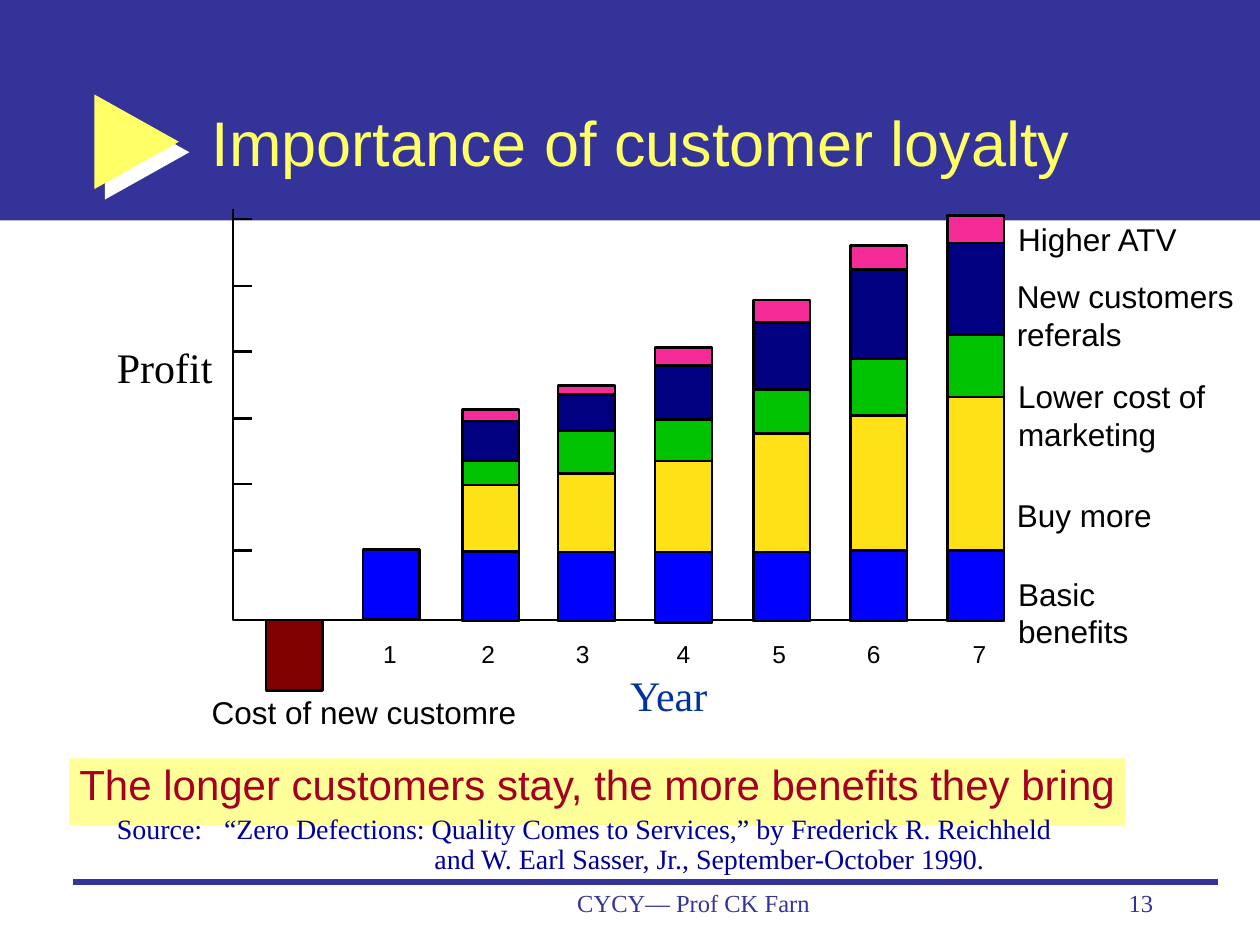
"""Build the customer loyalty slide with its stacked profit columns."""
from typing import NamedTuple

from lxml import etree
from pptx import Presentation
from pptx.dml.color import RGBColor
from pptx.enum.shapes import MSO_CONNECTOR, MSO_SHAPE
from pptx.enum.text import MSO_ANCHOR, PP_ALIGN
from pptx.oxml.ns import qn
from pptx.util import Emu, Pt

PX = 9144
RECTANGLE, ARROW = MSO_SHAPE.RECTANGLE, MSO_SHAPE.RIGHT_ARROW
STRAIGHT = MSO_CONNECTOR.STRAIGHT
LEFT, CENTER, RIGHT = PP_ALIGN.LEFT, PP_ALIGN.CENTER, PP_ALIGN.RIGHT
TOP, MIDDLE = MSO_ANCHOR.TOP, MSO_ANCHOR.MIDDLE
SANS, SERIF = "Arial", "Times New Roman"
BLACK, INDIGO, LEMON = "000000", "333399", "FFFF66"
BENEFIT_COLORS = ("0000FF", "FFE118", "00C200", "000080", "F52B97")
COLUMN_WIDTH, AXIS_LEFT, AXIS_Y, OUTLINE = 45, 185, 492, 1.48
TICK_TOP, TICK_BOTTOM, TICK_COUNT = 174, 437, 6


class Box(NamedTuple):
    """Left, top, width and height in px."""
    left: int
    top: int
    width: int
    height: int


class YearColumn(NamedTuple):
    """A year's column: its place and the top of each benefit, from the base up."""
    year: str
    year_left: int
    left: int
    base: int
    tops: tuple[int, ...]


class Label(NamedTuple):
    """A plain chart label."""
    text: str
    box: Box


YEARS = (
    YearColumn("1", 304, 288, 492, (436,)),
    YearColumn("2", 382, 367, 493, (438, 385, 366, 334, 325)),
    YearColumn("3", 457, 443, 493, (438, 376, 342, 313, 306)),
    YearColumn("4", 537, 520, 494, (438, 366, 333, 290, 276)),
    YearColumn("5", 613, 598, 493, (438, 344, 309, 256, 238)),
    YearColumn("6", 688, 675, 493, (437, 330, 285, 214, 195)),
    YearColumn("7", 772, 752, 493, (437, 315, 266, 193, 171)),
)
LABELS = (
    Label("Cost of new customre", Box(168, 550, 261, 38)),
    Label("Higher ATV", Box(808, 175, 141, 37)),
    Label("New customers\nreferals", Box(807, 220, 173, 36)),
    Label("Lower cost of marketing", Box(808, 299, 171, 27)),
    Label("Buy more", Box(807, 394, 132, 45)),
    Label("Basic benefits", Box(808, 456, 135, 25)),
)


def px(length: int) -> Emu:
    """Turn px into EMU."""
    return Emu(length * PX)


def rgb(value: str) -> RGBColor:
    """Turn a hex string into a colour."""
    return RGBColor.from_string(value)


def write(shape, text: str, *, size: int = 18, font: str = SANS, color: str = BLACK,
          align=LEFT, anchor=TOP, inset: tuple[int, int] = (0, 0),
          wrap: bool = True, spacing: float = 1.0) -> None:
    """Write formatted text into a shape."""
    frame = shape.text_frame
    frame.text = text
    frame.word_wrap = wrap
    frame.vertical_anchor = anchor
    frame.margin_left = frame.margin_right = px(inset[0])
    frame.margin_top = frame.margin_bottom = px(inset[1])
    for paragraph in frame.paragraphs:
        paragraph.alignment = align
        paragraph.line_spacing = spacing
        for run in paragraph.runs:
            run.font.size = Pt(size)
            run.font.name = font
            run.font.color.rgb = rgb(color)


def add_text(slide, text: str, box: Box, **text_format):
    """Add a text box and write into it."""
    text_box = slide.shapes.add_textbox(*map(px, box))
    write(text_box, text, **text_format)
    return text_box


def add_block(slide, box: Box, fill: str, outlined: bool = False, kind=RECTANGLE):
    """Add a filled preset shape, with or without a black outline."""
    block = slide.shapes.add_shape(kind, *map(px, box))
    block.shadow.inherit = False
    block.fill.solid()
    block.fill.fore_color.rgb = rgb(fill)
    if outlined:
        block.line.color.rgb = rgb(BLACK)
        block.line.width = Pt(OUTLINE)
    else:
        block.line.fill.background()
    return block


def add_rule(slide, left: int, right: int, y: int, color: str, width: float) -> None:
    """Add a horizontal line."""
    rule = slide.shapes.add_connector(STRAIGHT, px(left), px(y), px(right), px(y))
    rule.line.color.rgb = rgb(color)
    rule.line.width = Pt(width)
    etree.SubElement(rule._element.spPr, qn("a:effectLst"))


def add_title_arrow(slide) -> None:
    """Add the yellow pointer with its hard white shadow."""
    arrow = add_block(slide, Box(75, 75, 67, 75), LEMON, kind=ARROW)
    arrow.adjustments[0] = 0.38
    arrow.adjustments[1] = 1
    effects = arrow._element.spPr.find(qn("a:effectLst"))
    shadow = etree.SubElement(effects, qn("a:outerShdw"), dist=str(Pt(8.5)),
                              dir="2700000", algn="ctr", rotWithShape="0")
    etree.SubElement(shadow, qn("a:srgbClr"), val="FFFFFF")


def add_axes(slide) -> None:
    """Add the axis line and its evenly spaced ticks."""
    builder = slide.shapes.build_freeform(AXIS_LEFT, 166, scale=PX)
    builder.add_line_segments(((AXIS_LEFT, AXIS_Y), (797, AXIS_Y)), close=False)
    axes = builder.convert_to_shape()
    axes.shadow.inherit = False
    axes.fill.background()
    axes.line.color.rgb = rgb(BLACK)
    axes.line.width = Pt(OUTLINE)
    for tick in range(TICK_COUNT):
        y = TICK_TOP + round(tick * (TICK_BOTTOM - TICK_TOP) / (TICK_COUNT - 1))
        add_rule(slide, AXIS_LEFT, AXIS_LEFT + 15, y, BLACK, OUTLINE)


def add_year(slide, column: YearColumn) -> None:
    """Add the whole column in its top colour, then the benefits below it."""
    *lower_tops, peak = column.tops
    add_block(slide, Box(column.left, peak, COLUMN_WIDTH, column.base - peak),
              BENEFIT_COLORS[len(lower_tops)], outlined=True)
    bottom = column.base
    for top, color in zip(lower_tops, BENEFIT_COLORS):
        add_block(slide, Box(column.left, top, COLUMN_WIDTH, bottom - top), color, outlined=True)
        bottom = top
    add_text(slide, column.year, Box(column.year_left, 507, 17, 30), size=14)


def add_source(slide) -> None:
    """Add the citation with its hanging first line and indented second line."""
    citation = add_text(
        slide,
        "Source:\t“Zero Defections: Quality Comes to Services,” by Frederick R. Reichheld\n"
        "and W. Earl Sasser, Jr., September-October 1990.",
        Box(83, 642, 850, 58), size=16, font=SERIF, color="000099", inset=(10, 5), spacing=0.9)
    for paragraph, margin, indent in zip(citation.text_frame.paragraphs, (85, 252), (-85, 0)):
        properties = paragraph._p.get_or_add_pPr()
        properties.set("marL", str(px(margin)))
        properties.set("indent", str(px(indent)))


def main() -> None:
    """Build and save the slide."""
    deck = Presentation()
    deck.slide_width, deck.slide_height = px(1000), px(750)
    slide = deck.slides.add_slide(deck.slide_layouts[5])

    header = add_block(slide, Box(0, 0, 1000, 175), INDIGO)
    title = slide.shapes.title
    header._element.addnext(title._element)
    title.left, title.top, title.width, title.height = map(px, Box(158, 50, 758, 125))
    write(title, "Importance of customer loyalty", size=36, color=LEMON,
          anchor=MIDDLE, inset=(10, 5))
    add_title_arrow(slide)

    add_rule(slide, 58, 967, 700, INDIGO, 3)
    footer = dict(size=14, font=SERIF, color=INDIGO, inset=(10, 5))
    add_text(slide, "CYCY— Prof CK Farn", Box(392, 700, 317, 50), align=CENTER, **footer)
    add_text(slide, "13", Box(717, 700, 208, 50), align=RIGHT, **footer)

    for label in LABELS:
        add_text(slide, label.text, label.box)
    banner = add_block(slide, Box(55, 602, 838, 53), "FFFF99")
    write(banner, "The longer customers stay, the more benefits they bring",
          size=24, color="A50021", align=CENTER)
    add_source(slide)

    add_axes(slide)
    add_block(slide, Box(211, AXIS_Y, COLUMN_WIDTH, 56), "810000", outlined=True)
    for column in YEARS:
        add_year(slide, column)
    add_text(slide, "Year", Box(500, 531, 71, 30), size=24, font=SERIF, color="003399")
    add_text(slide, "Profit", Box(83, 266, 97, 50), size=24, font=SERIF,
             inset=(10, 5), wrap=False)
    deck.save("out.pptx")


if __name__ == "__main__":
    main()
